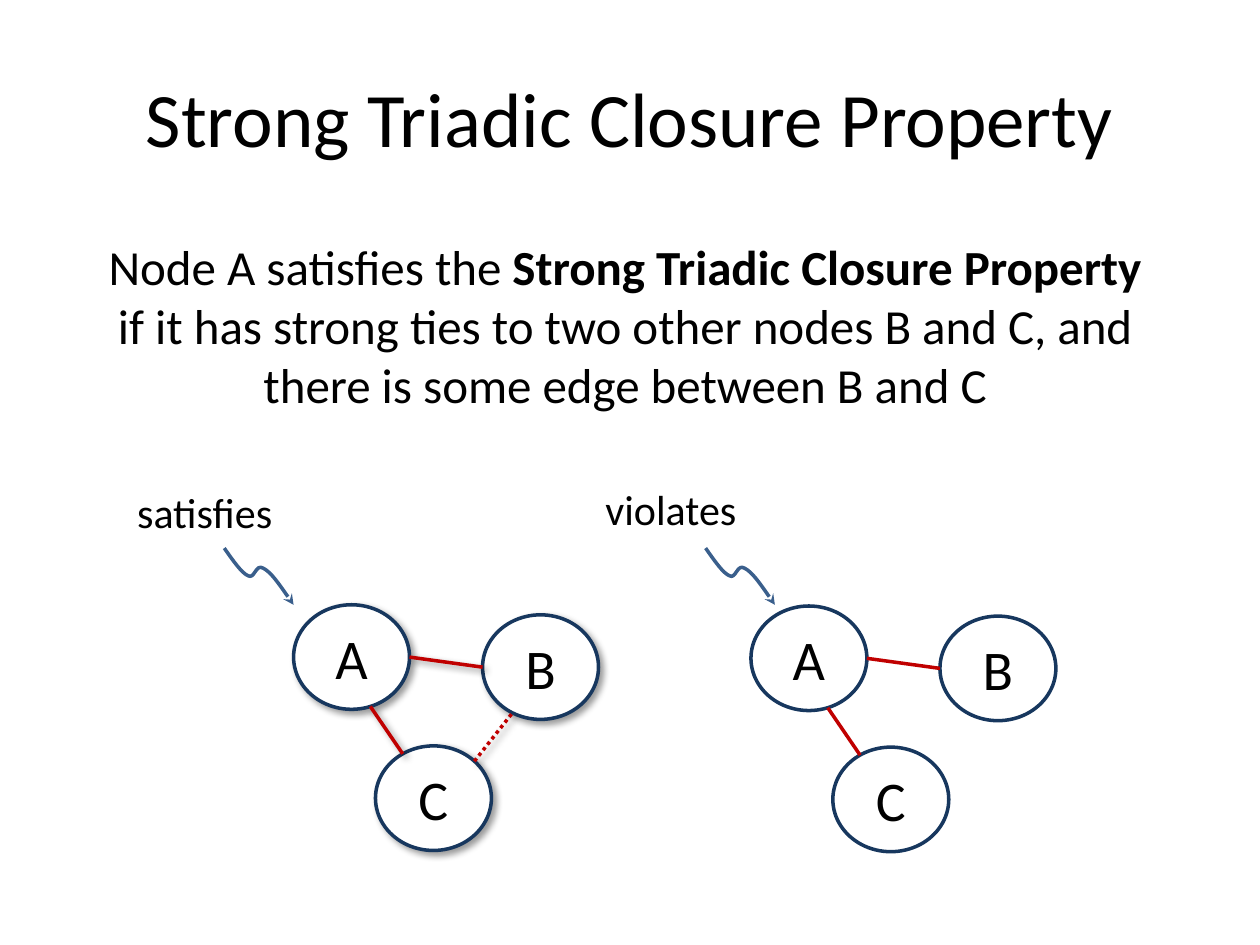
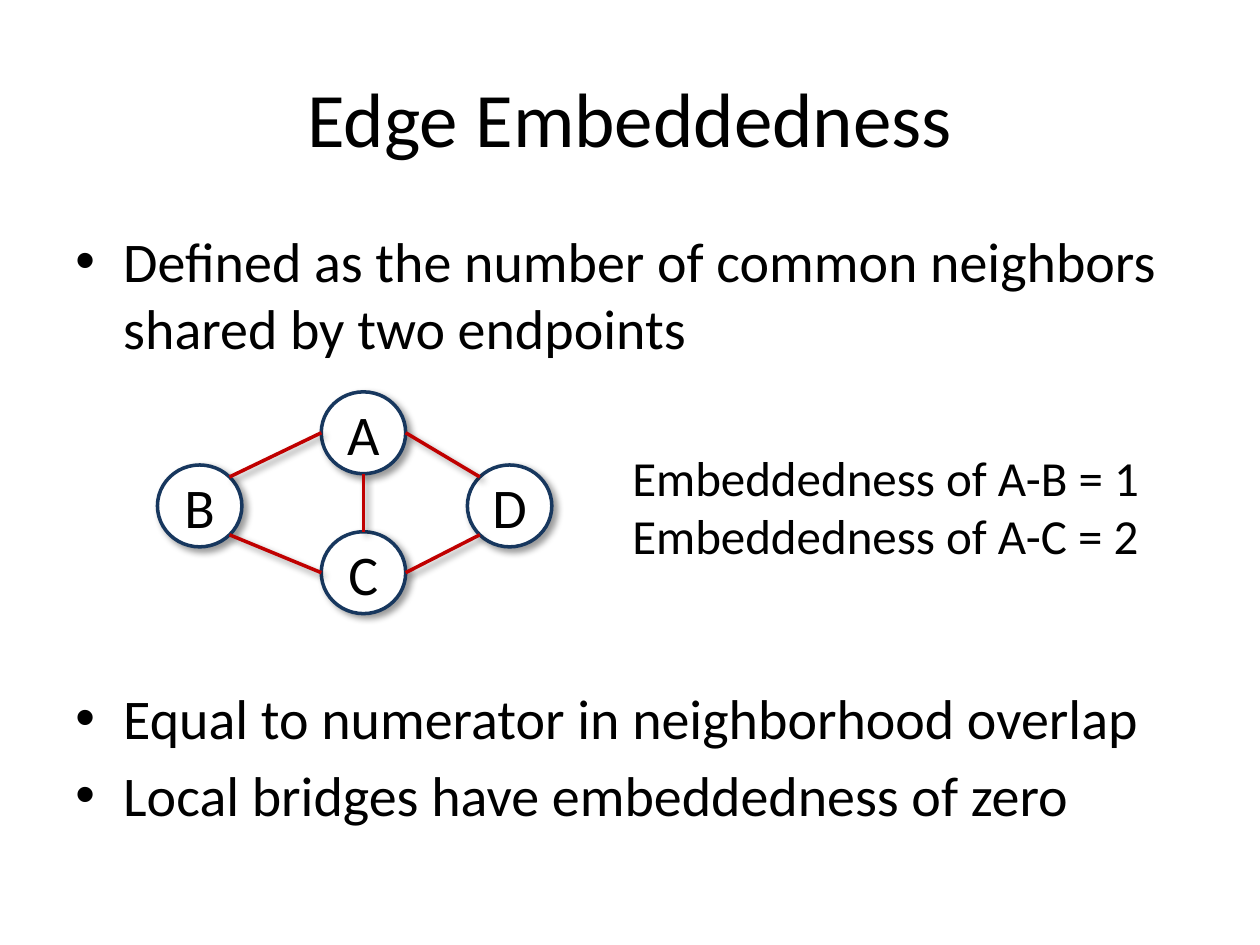
from math import cos, radians, sin

from lxml.etree import SubElement
from pptx import Presentation
from pptx.dml.color import RGBColor
from pptx.enum.dml import MSO_LINE
from pptx.enum.shapes import MSO_CONNECTOR, MSO_SHAPE
from pptx.enum.text import MSO_ANCHOR, PP_ALIGN
from pptx.oxml.ns import qn
from pptx.util import Pt

# Lengths are px, 100 to the inch
PX = 9144

BLACK = RGBColor(0x00, 0x00, 0x00)
WHITE = RGBColor(0xFF, 0xFF, 0xFF)
NAVY = RGBColor(0x17, 0x37, 0x5E)
RED = RGBColor(0xC0, 0x00, 0x00)
STEEL = RGBColor(0x3A, 0x5F, 0x8C)

FONT = "Calibri"
LINE_WIDTH = Pt(2)
BULLET_INDENT = 38
BULLET_GAP = 6

# Directions on a node's rim, in degrees clockwise from the right
RIGHT, LOWER_RIGHT, DOWN, LOWER_LEFT = 0, 45, 90, 135
LEFT, UPPER_LEFT, UP, UPPER_RIGHT = 180, 225, 270, 315


class Deck:
    """Holds the shared style and the current slide."""

    def __init__(self):
        self.presentation = Presentation()
        self.presentation.slide_width = 1000 * PX
        self.presentation.slide_height = 750 * PX
        self.slide = None

    def add_slide(self, title):
        self.slide = self.presentation.slides.add_slide(self.presentation.slide_layouts[6])
        self.text((50, 30, 900, 125), [[(title, False)]], 44,
                  PP_ALIGN.CENTER, MSO_ANCHOR.MIDDLE)

    def add_run(self, paragraph, text, size, bold=False):
        run = paragraph.add_run()
        run.text = text
        run.font.name = FONT
        run.font.size = Pt(size)
        run.font.bold = bold
        run.font.color.rgb = BLACK

    def text(self, box, paragraphs, size, align=PP_ALIGN.LEFT, anchor=MSO_ANCHOR.TOP):
        """Each paragraph is a list of (text, bold) runs."""
        shape = self.slide.shapes.add_textbox(*(length * PX for length in box))
        frame = shape.text_frame
        frame.word_wrap = True
        frame.vertical_anchor = anchor
        for index, runs in enumerate(paragraphs):
            paragraph = frame.add_paragraph() if index else frame.paragraphs[0]
            paragraph.alignment = align
            for text, bold in runs:
                self.add_run(paragraph, text, size, bold)
        return frame

    def bullets(self, box, items, size):
        """Each item is (text, space before in points)."""
        frame = self.text(box, [[(text, False)] for text, _ in items], size)
        for paragraph, (_, gap) in zip(frame.paragraphs, items):
            paragraph.space_before = Pt(gap)
            properties = paragraph._p.get_or_add_pPr()
            properties.set("marL", str(BULLET_INDENT * PX))
            properties.set("indent", str(-BULLET_INDENT * PX))
            SubElement(properties, qn("a:buFont"), typeface="Arial")
            SubElement(properties, qn("a:buChar"), char="•")

    def set_shadow(self, shape, visible):
        """An empty effect list turns the theme's shadow off."""
        effects = SubElement(shape._element.spPr, qn("a:effectLst"))
        if visible:
            shadow = SubElement(effects, qn("a:outerShdw"), blurRad=str(Pt(4)),
                                dist=str(Pt(3)), dir="2700000", algn="tl", rotWithShape="0")
            color = SubElement(shadow, qn("a:srgbClr"), val=str(BLACK))
            SubElement(color, qn("a:alpha"), val="40000")

    def node(self, label, box, shadow):
        shape = self.slide.shapes.add_shape(MSO_SHAPE.OVAL, *(length * PX for length in box))
        shape.fill.solid()
        shape.fill.fore_color.rgb = WHITE
        shape.line.color.rgb = NAVY
        shape.line.width = LINE_WIDTH
        self.set_shadow(shape, shadow)
        shape.text_frame.vertical_anchor = MSO_ANCHOR.MIDDLE
        paragraph = shape.text_frame.paragraphs[0]
        paragraph.alignment = PP_ALIGN.CENTER
        self.add_run(paragraph, label, 32)
        return shape

    def rim_point(self, node, angle):
        turn = radians(angle)
        return (round(node.left + node.width / 2 * (1 + cos(turn))),
                round(node.top + node.height / 2 * (1 + sin(turn))))

    def edge(self, start, start_angle, end, end_angle, shadow, dotted=False):
        connector = self.slide.shapes.add_connector(
            MSO_CONNECTOR.STRAIGHT,
            *self.rim_point(start, start_angle), *self.rim_point(end, end_angle))
        connector.line.color.rgb = RED
        connector.line.width = LINE_WIDTH
        if dotted:
            connector.line.dash_style = MSO_LINE.ROUND_DOT
        self.set_shadow(connector, shadow)

    def graph(self, positions, size, edges, shadow):
        """Edges are (start, angle, end, angle), and True after them if dotted."""
        nodes = {label: self.node(label, (*corner, *size), shadow)
                 for label, corner in positions.items()}
        for start, start_angle, end, end_angle, *dotted in edges:
            self.edge(nodes[start], start_angle, nodes[end], end_angle, shadow, bool(dotted))

    def wavy_arrow(self, left, top):
        offsets = [(7, 10), (14, 20), (19, 22), (24, 25), (25, 12), (31, 16),
                   (37, 19), (46, 32), (55, 45)]
        builder = self.slide.shapes.build_freeform(left, top, scale=PX)
        builder.add_line_segments([(left + x, top + y) for x, y in offsets], close=False)
        shape = builder.convert_to_shape()
        # Every three straight segments become one curve
        segments = list(shape._element.iter(qn("a:lnTo")))
        for first in range(0, len(segments), 3):
            curve = SubElement(segments[first].getparent(), qn("a:cubicBezTo"))
            for segment in segments[first:first + 3]:
                curve.append(segment[0])
                segment.getparent().remove(segment)
        shape.fill.background()
        shape.line.color.rgb = STEEL
        shape.line.width = LINE_WIDTH
        SubElement(shape.line._get_or_add_ln(), qn("a:tailEnd"), type="stealth")
        self.set_shadow(shape, False)


def triadic_closure(deck):
    deck.add_slide("Strong Triadic Closure Property")
    deck.text((75, 183, 842, 151), [[
        ("Node A satisfies the ", False),
        ("Strong Triadic Closure Property ", True),
        ("if it has strong ties to two other nodes B and C, "
         "and there is some edge between B and C", False),
    ]], 28, PP_ALIGN.CENTER)

    # Two triads: the first one closed by a dotted edge
    strong_ties = [("A", RIGHT, "B", LEFT), ("A", 71, "C", 238)]
    closing_edge = ("C", UPPER_RIGHT, "B", 119, True)
    triads = [
        ("satisfies", (46, 381), (178, 435), (233, 480), strong_ties + [closing_edge], True),
        ("violates", (416, 379), (560, 435), (596, 481), strong_ties, False),
    ]
    for label, label_corner, arrow_start, (left, top), edges, shadow in triads:
        positions = {"A": (left, top), "C": (left + 65, top + 112), "B": (left + 150, top + 8)}
        deck.graph(positions, (92, 83), edges, shadow)
        deck.wavy_arrow(*arrow_start)
        deck.text((*label_corner, 233, 50), [[(label, False)]], 24, PP_ALIGN.CENTER)


def edge_embeddedness(deck):
    deck.add_slide("Edge Embeddedness")
    # The second bullet leaves room for the graph
    deck.bullets((50, 175, 900, 500), [
        ("Defined as the number of common neighbors shared by two endpoints", BULLET_GAP),
        ("Equal to numerator in neighborhood overlap", 184),
        ("Local bridges have embeddedness of zero", BULLET_GAP),
    ], 32)

    # Graph of four nodes
    positions = {"A": (255, 311), "C": (255, 422), "B": (125, 369), "D": (371, 369)}
    deck.graph(positions, (67, 65), [
        ("C", LEFT, "B", LOWER_RIGHT),
        ("D", LOWER_LEFT, "C", RIGHT),
        ("A", LEFT, "B", UPPER_RIGHT),
        ("D", UPPER_LEFT, "A", RIGHT),
        ("C", UP, "A", DOWN),
    ], True)
    deck.text((492, 350, 433, 104), [
        [(f"Embeddedness of {pair} = {count}", False)]
        for pair, count in (("A-B", 1), ("A-C", 2))
    ], 28)


def main():
    deck = Deck()
    triadic_closure(deck)
    edge_embeddedness(deck)
    deck.presentation.save("out.pptx")


if __name__ == "__main__":
    main()
